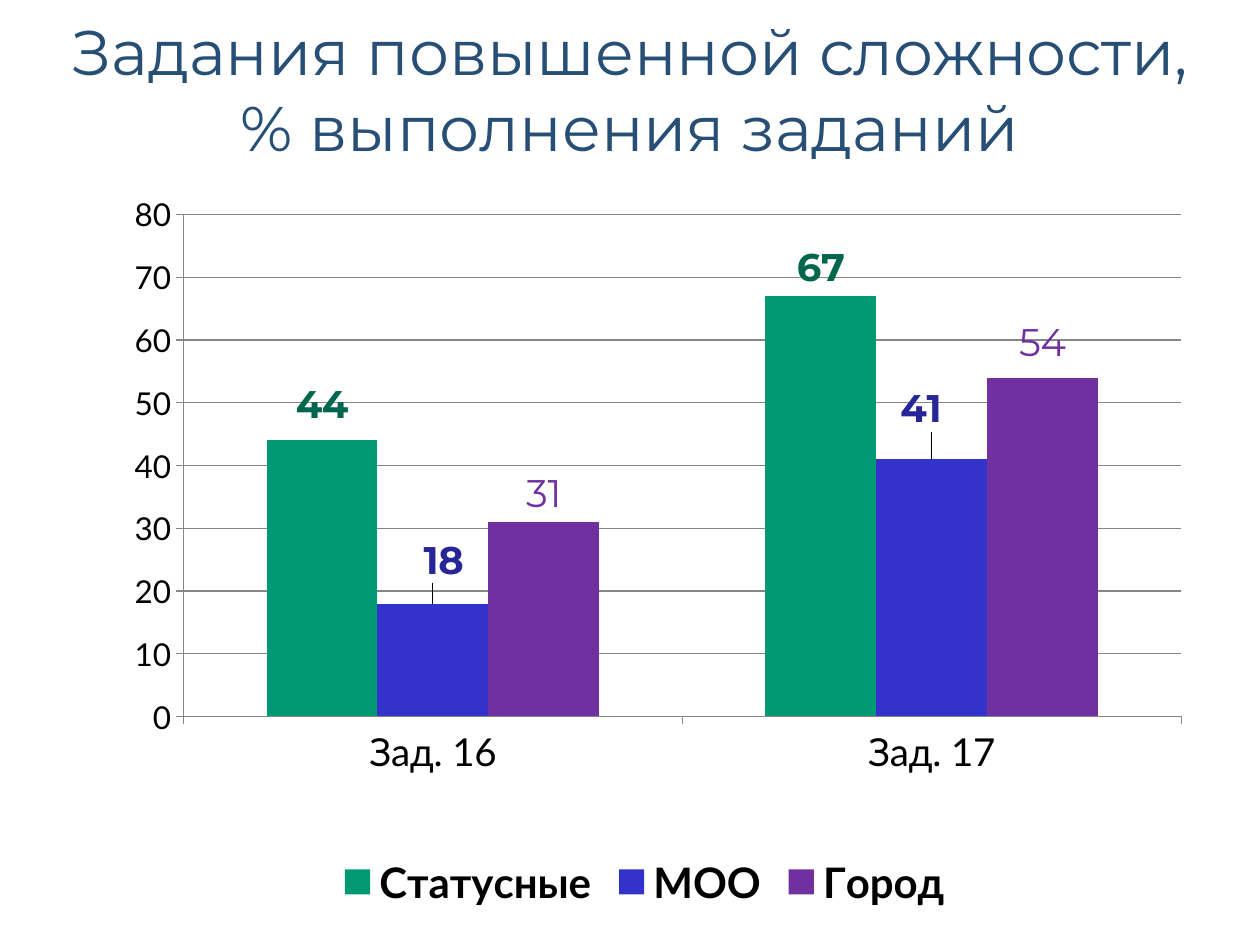
from lxml.etree import SubElement
from pptx import Presentation
from pptx.chart.data import CategoryChartData
from pptx.dml.color import RGBColor
from pptx.enum.chart import XL_CHART_TYPE, XL_LABEL_POSITION, XL_LEGEND_POSITION, XL_TICK_MARK
from pptx.enum.text import MSO_ANCHOR, MSO_AUTO_SIZE, PP_ALIGN
from pptx.oxml.ns import qn
from pptx.util import Inches, Pt

TITLE = ["Задания повышенной сложности,", "% выполнения заданий"]
CATS = ["Зад. 16", "Зад. 17"]
# name, values, fill, label colour, bold label, label shifts (share of chart size)
SERIES = [
    ("Статусные", (44, 67), "009973", "00664D", True, [(0, -0.01), (0, 0)]),
    ("МОО", (18, 41), "3333CC", "262699", True, [(0.01, -0.02), (-0.01, -0.03)]),
    ("Город", (31, 54), "7030A0", "7030A0", False, [(0, 0), (0, -0.01)]),
]


def rgb(code):
    return RGBColor.from_string(code)


def style(font, size, color, face, bold=False):
    font.size, font.name, font.bold = Pt(size), face, bold
    font.color.rgb = rgb(color)


def set_layout(layout, **parts):
    manual = SubElement(layout, qn("c:manualLayout"))
    for tag, val in parts.items():
        SubElement(manual, qn("c:" + tag)).set("val", str(val))


def add_title(slide, left, top, width, height):
    title = slide.shapes.title
    title.left, title.top, title.width, title.height = left, top, width, height
    frame = title.text_frame
    frame.auto_size = MSO_AUTO_SIZE.NONE
    frame.vertical_anchor = MSO_ANCHOR.MIDDLE
    para = frame.paragraphs[0]
    para.alignment = PP_ALIGN.CENTER
    para.line_spacing = 1.0
    for i, line in enumerate(TITLE):
        if i:
            para.add_line_break()
        run = para.add_run()
        run.text = line
        style(run.font, 36, "274E75", "Montserrat")


def format_series(series, fill, color, bold, shifts):
    series.format.fill.solid()
    series.format.fill.fore_color.rgb = rgb(fill)
    series.invert_if_negative = False
    # Value labels, each nudged off its bar
    for i, (dx, dy) in enumerate(shifts):
        label = series.points[i].data_label
        style(label.font, 22, color, "Montserrat", bold)
        label.position = XL_LABEL_POSITION.OUTSIDE_END
        if dx or dy:
            node = series.data_labels._element.findall(qn("c:dLbl"))[i]
            layout = SubElement(node, qn("c:layout"))
            node.insert(1, layout)
            set_layout(layout, x=dx, y=dy)
    series.data_labels.show_value = True
    style(series.data_labels.font, 22, color, "Montserrat", bold)


def add_bars(slide, left, top, width, height):
    data = CategoryChartData()
    data.categories = CATS
    for name, vals, *_ in SERIES:
        data.add_series(name, vals)
    chart = slide.shapes.add_chart(
        XL_CHART_TYPE.COLUMN_CLUSTERED, left, top, width, height, data).chart
    chart.has_title = False
    style(chart.font, 18, "000000", "Lato")

    # Plot area
    plot = chart.plots[0]
    plot.gap_width, plot.overlap = 150, 0
    plot.vary_by_categories = False
    area = chart._chartSpace.chart.plotArea
    layout = area.find(qn("c:layout"))
    if layout is None:
        layout = SubElement(area, qn("c:layout"))
        area.insert(0, layout)
    set_layout(layout, layoutTarget="inner", xMode="edge", yMode="edge",
               x=0.07, y=0.05, w=0.93, h=0.68)

    # Bars
    for series, (_, _, *look) in zip(plot.series, SERIES):
        format_series(series, *look)

    # Axes
    cat, val = chart.category_axis, chart.value_axis
    val.minimum_scale, val.maximum_scale, val.major_unit = 0, 80, 10
    val.has_major_gridlines = True
    for axis, size in ((cat, 22), (val, 18)):
        axis.major_tick_mark = XL_TICK_MARK.OUTSIDE
        style(axis.tick_labels.font, size, "000000", "Lato")
    for line in (cat.format.line, val.format.line, val.major_gridlines.format.line):
        line.color.rgb = rgb("868686")
        line.width = Pt(0.75)

    # Legend
    chart.has_legend = True
    chart.legend.position = XL_LEGEND_POSITION.BOTTOM
    chart.legend.include_in_layout = False
    style(chart.legend.font, 24, "000000", "Lato", True)


def main():
    prs = Presentation()
    prs.slide_width, prs.slide_height = Inches(10), Inches(7.5)
    slide = prs.slides.add_slide(prs.slide_layouts[5])
    add_title(slide, Inches(0), Inches(0.23), Inches(10), Inches(0.94))
    add_bars(slide, Inches(0.86), Inches(1.41), Inches(8.52), Inches(5.86))
    prs.save("out.pptx")


if __name__ == "__main__":
    main()
